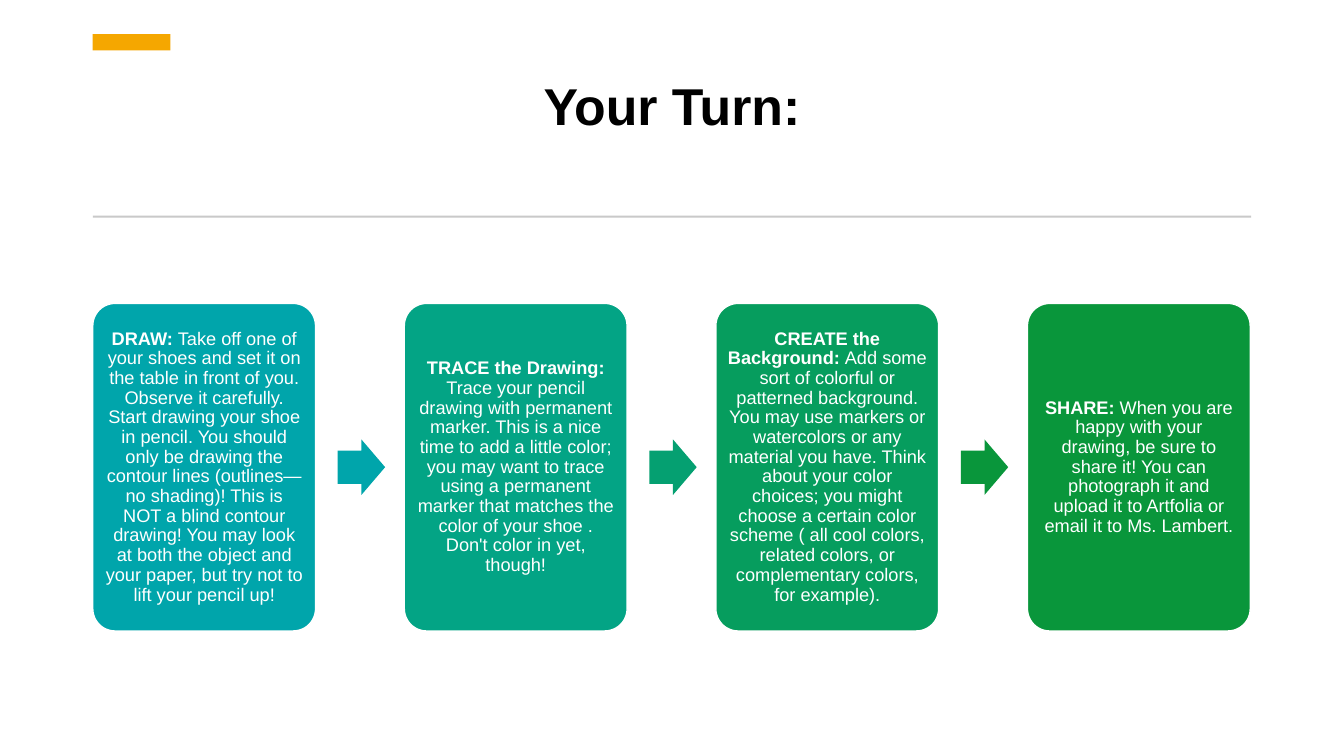
from pptx import Presentation
from pptx.dml.color import RGBColor
from pptx.enum import shapes, text
from pptx.util import Inches, Pt

TITLE = "Your Turn:"
STEPS = [
    ("DRAW: ", "Take off one of your shoes and set it on the table in front of you. Observe it carefully. "
     "Start drawing your shoe in pencil. You should only be drawing the contour lines "
     "(outlines—no shading)! This is NOT a blind contour drawing! You may look at both the object "
     "and your paper, but try not to lift your pencil up!"),
    ("TRACE the Drawing: ", "Trace your pencil drawing with permanent marker. This is a nice time to add "
     "a little color; you may want to trace using a permanent marker that matches the color of your "
     "shoe . Don't color in yet, though!"),
    ("CREATE the Background: ", "Add some sort of colorful or patterned background. You may use markers "
     "or watercolors or any material you have. Think about your color choices; you might choose a "
     "certain color scheme ( all cool colors, related colors, or complementary colors, for example)."),
    ("SHARE: ", "When you are happy with your drawing, be sure to share it! You can photograph it and "
     "upload it to Artfolia or email it to Ms. Lambert."),
]

THEME = {
    "font": "Arial", "title_size": 37, "step_size": 13,
    "title": "000000", "white": "FFFFFF", "accent": "F5A700", "rule": "C9C9C9",
    "cards": ["00A5AB", "03A485", "069D5E", "09963B"],
    "arrows": ["00A5AB", "05A071", "09963B"],
}

LEFT, WIDTH = 0.92, 11.49
CARD_TOP, CARD_WIDTH, CARD_HEIGHT = 3.01, 2.21, 3.25
PITCH = 3.09
ARROW_OFFSET, ARROW_WIDTH, ARROW_HEIGHT = 2.43, 0.47, 0.55
ARROW_TOP = CARD_TOP + (CARD_HEIGHT - ARROW_HEIGHT) / 2


def add_block(page, kind, left, top, width, height, fill, line=None):
    shape = page.shapes.add_shape(kind, Inches(left), Inches(top), Inches(width), Inches(height))
    shape.shadow.inherit = False
    shape.fill.solid()
    shape.fill.fore_color.rgb = RGBColor.from_string(fill)
    if line:
        shape.line.color.rgb = RGBColor.from_string(line)
        shape.line.width = Pt(1)
    else:
        shape.line.fill.background()
    return shape


def write(frame, spans, size, color, anchor):
    frame.word_wrap = True
    frame.vertical_anchor = anchor
    para = frame.paragraphs[0]
    para.alignment = text.PP_ALIGN.CENTER
    para.line_spacing = 0.9
    for words, bold in spans:
        span = para.add_run()
        span.text = words
        span.font.name = THEME["font"]
        span.font.size = Pt(size)
        span.font.bold = bold
        span.font.color.rgb = RGBColor.from_string(color)


def add_step(page, index, heading, body):
    card = add_block(page, shapes.MSO_SHAPE.ROUNDED_RECTANGLE, LEFT + index * PITCH, CARD_TOP,
                     CARD_WIDTH, CARD_HEIGHT, THEME["cards"][index], THEME["white"])
    card.adjustments[0] = 0.1
    frame = card.text_frame
    frame.margin_left = frame.margin_right = Inches(0.05)
    frame.margin_top = frame.margin_bottom = Inches(0.05)
    write(frame, [(heading, True), (body, False)], THEME["step_size"], THEME["white"],
          text.MSO_ANCHOR.MIDDLE)


def add_arrow(page, index, fill):
    arrow = add_block(page, shapes.MSO_SHAPE.RIGHT_ARROW, LEFT + index * PITCH + ARROW_OFFSET,
                      ARROW_TOP, ARROW_WIDTH, ARROW_HEIGHT, fill)
    arrow.adjustments[0] = 0.6
    arrow.adjustments[1] = 0.5


def main():
    deck = Presentation()
    deck.slide_width, deck.slide_height = Inches(13.33), Inches(7.5)
    page = deck.slides.add_slide(deck.slide_layouts[6])

    title = page.shapes.add_textbox(Inches(LEFT), Inches(0.75), Inches(WIDTH), Inches(0.65))
    write(title.text_frame, [(TITLE, True)], THEME["title_size"], THEME["title"],
          text.MSO_ANCHOR.BOTTOM)
    add_block(page, shapes.MSO_SHAPE.RECTANGLE, LEFT, 0.34, 0.77, 0.16, THEME["accent"])
    add_block(page, shapes.MSO_SHAPE.RECTANGLE, LEFT, 2.14, WIDTH, 0.02, THEME["rule"])

    for index, (heading, body) in enumerate(STEPS):
        add_step(page, index, heading, body)
    for index, fill in enumerate(THEME["arrows"]):
        add_arrow(page, index, fill)

    deck.save("out.pptx")


if __name__ == "__main__":
    main()
